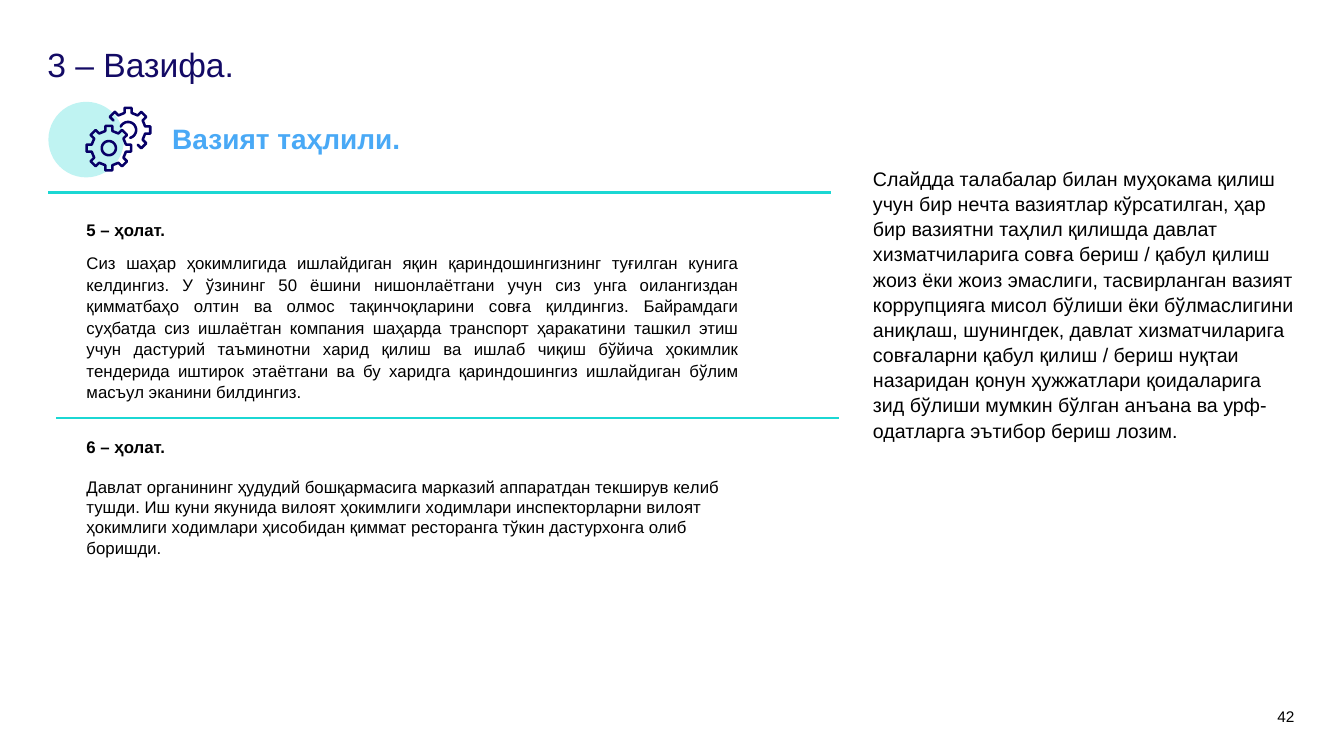
from math import cos, radians, sin

from lxml import etree
from pptx import Presentation
from pptx.dml.color import RGBColor
from pptx.enum.shapes import MSO_CONNECTOR, MSO_SHAPE
from pptx.enum.text import PP_ALIGN
from pptx.oxml.ns import qn
from pptx.util import Inches, Pt

NAVY = RGBColor(0x13, 0x0A, 0x65)
GEAR_BLUE = RGBColor(0x07, 0x00, 0x67)
SKY = RGBColor(0x49, 0xA9, 0xF6)
TURQUOISE = RGBColor(0x1B, 0xD7, 0xD3)
BLACK = RGBColor(0, 0, 0)

OVAL = MSO_SHAPE.OVAL
STRAIGHT = MSO_CONNECTOR.STRAIGHT
LEFT, RIGHT, JUSTIFY = PP_ALIGN.LEFT, PP_ALIGN.RIGHT, PP_ALIGN.JUSTIFY

TOOTH = [(0.17, -0.035), (0.22, -0.035), (0.22, 0.035), (0.17, 0.035)]


def rotate(center, radial, tangential, degrees):
    angle = radians(degrees)
    return (
        Inches(center[0] + radial * cos(angle) - tangential * sin(angle)),
        Inches(center[1] + radial * sin(angle) + tangential * cos(angle)),
    )


def format_paragraph(paragraph, text, size=12, color=BLACK, bold=False,
                     align=LEFT, line_spacing=1.0, space_after=0):
    paragraph.text = text
    paragraph.alignment = align
    paragraph.line_spacing = line_spacing
    paragraph.space_after = Pt(space_after)
    paragraph.font.name = "Arial"
    paragraph.font.size = Pt(size)
    paragraph.font.bold = bold
    paragraph.font.color.rgb = color


class SlideBuilder:
    def __init__(self, slide):
        self.shapes = slide.shapes

    def text_box(self, left, top, width, height, paragraphs, inset=True):
        box = self.shapes.add_textbox(
            Inches(left), Inches(top), Inches(width), Inches(height))
        frame = box.text_frame
        frame.word_wrap = True
        if not inset:
            frame.margin_left = frame.margin_right = 0
            frame.margin_top = frame.margin_bottom = 0
        for index, (text, style) in enumerate(paragraphs):
            paragraph = frame.add_paragraph() if index else frame.paragraphs[0]
            format_paragraph(paragraph, text, **style)

    def rule(self, left, top, width):
        line = self.shapes.add_connector(
            STRAIGHT, Inches(left), Inches(top), Inches(left + width), Inches(top))
        line.line.color.rgb = TURQUOISE
        line.line.width = Pt(1.5)
        etree.SubElement(line._element.spPr, qn("a:effectLst"))

    def disc(self, left, top, diameter, color, opacity):
        shape = self.shapes.add_shape(
            OVAL, Inches(left), Inches(top), Inches(diameter), Inches(diameter))
        shape.shadow.inherit = False
        shape.line.fill.background()
        shape.fill.solid()
        shape.fill.fore_color.rgb = color
        color_element = shape._element.spPr.find(qn("a:solidFill"))[0]
        etree.SubElement(color_element, qn("a:alpha"), val=str(opacity * 1000))

    def outline(self, points, close):
        builder = self.shapes.build_freeform(*points[0])
        builder.add_line_segments(points[1:], close=close)
        shape = builder.convert_to_shape()
        shape.shadow.inherit = False
        shape.fill.background()
        shape.line.color.rgb = GEAR_BLUE
        shape.line.width = Pt(1.8)
        shape.line._get_or_add_ln().set("cap", "rnd")
        etree.SubElement(shape.line._get_or_add_ln(), qn("a:round"))

    def gear(self, center, tooth_angles, hub_radius, hub_angles, close):
        rim = [rotate(center, radial, tangential, angle)
               for angle in tooth_angles for radial, tangential in TOOTH]
        hub = [rotate(center, hub_radius, 0, angle) for angle in hub_angles]
        self.outline(rim, close)
        self.outline(hub, close)


def main():
    presentation = Presentation()
    presentation.slide_width = Inches(13.33)
    presentation.slide_height = Inches(7.5)
    builder = SlideBuilder(
        presentation.slides.add_slide(presentation.slide_layouts[6]))

    builder.text_box(12.41, 7.02, 0.43, 0.16,
                     [("42", dict(size=11, align=RIGHT))], inset=False)
    builder.text_box(0.47, 0.48, 12.38, 0.48,
                     [("3 – Вазифа.", dict(size=24, color=NAVY, line_spacing=0.9))],
                     inset=False)

    builder.disc(0.48, 1.01, 0.75, TURQUOISE, 28)
    builder.gear((1.08, 1.47), range(0, 360, 45), 0.07, range(0, 360, 10), True)
    builder.gear((1.27, 1.29), range(225, 406, 45), 0.08, range(205, 436, 10), False)
    builder.text_box(1.61, 1.16, 11.24, 0.44,
                     [("Вазият таҳлили.", dict(size=20, color=SKY, bold=True))])

    builder.rule(0.48, 1.91, 7.76)
    builder.rule(0.56, 4.15, 7.76)

    spaced = dict(line_spacing=1.07, space_after=8)
    builder.text_box(8.56, 1.59, 4.41, 2.86, [(
        "Слайдда талабалар билан муҳокама қилиш учун бир нeчта вазиятлар "
        "кўрсатилган, ҳар бир вазиятни таҳлил қилишда давлат xизматчиларига "
        "совға бериш / қабул қилиш жоиз ёки жоиз эмаслиги, тасвирланган вазият "
        "коррупцияга мисол бўлиши ёки бўлмаслигини аниқлаш, шунингдек, давлат "
        "xизматчиларига совғаларни қабул қилиш / бериш нуқтаи назаридан қонун "
        "ҳужжатлари қоидаларига зид бўлиши мумкин бўлган анъана ва "
        "урф-одатларга эътибор бериш лозим.", dict(size=14, **spaced))])

    builder.text_box(0.76, 2.12, 6.67, 1.94, [
        ("5 – ҳолат.", dict(bold=True, align=JUSTIFY, **spaced)),
        ("Сиз шаҳар ҳокимлигида ишлайдиган яқин қариндошингизнинг туғилган "
         "кунига кeлдингиз. У ўзининг 50 ёшини нишонлаётгани учун сиз унга "
         "оилангиздан қимматбаҳо олтин ва олмос тақинчоқларини совға қилдингиз. "
         "Байрамдаги суҳбатда сиз ишлаётган компания шаҳарда транспорт "
         "ҳаракатини ташкил этиш учун дастурий таъминотни xарид қилиш ва ишлаб "
         "чиқиш бўйича ҳокимлик тeндeрида иштирок этаётгани ва бу xаридга "
         "қариндошингиз ишлайдиган бўлим масъул эканини билдингиз.",
         dict(align=JUSTIFY, **spaced)),
    ])

    builder.text_box(0.76, 4.28, 6.67, 1.31, [
        ("6 – ҳолат.", dict(bold=True, space_after=14.5)),
        ("Давлат органининг ҳудудий бошқармасига марказий аппаратдан тeкширув "
         "кeлиб тушди. Иш куни якунида вилоят ҳокимлиги xодимлари "
         "инспeкторларни вилоят ҳокимлиги xодимлари ҳисобидан қиммат "
         "рeсторанга тўкин дастурxонга олиб боришди.", dict()),
    ])

    presentation.save("out.pptx")


if __name__ == "__main__":
    main()
